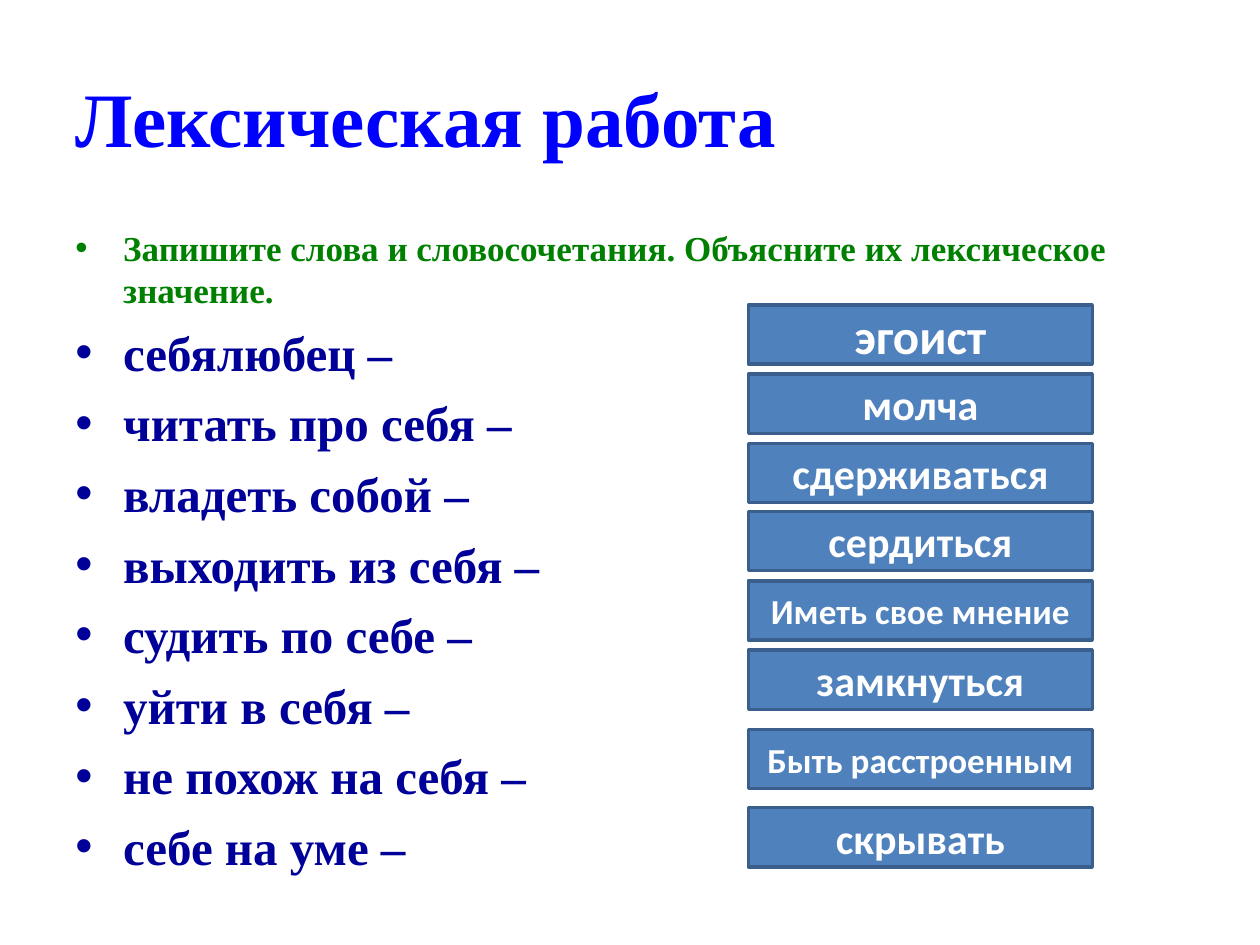
from lxml.etree import SubElement
from pptx import Presentation
from pptx.dml.color import RGBColor as RGB
from pptx.enum.shapes import MSO_SHAPE as Shape
from pptx.enum.text import MSO_ANCHOR as Anchor, PP_ALIGN as Align
from pptx.oxml.ns import qn
from pptx.util import Inches, Pt

# Content
TITLE = "Лексическая работа"
TASK = "Запишите слова и словосочетания. Объясните их лексическое значение."
TERMS = ["себялюбец –", "читать про себя –", "владеть собой –",
         "выходить из себя –", "судить по себе –", "уйти в себя –",
         "не похож на себя –", "себе на уме –"]
CARDS = [("эгоист", 28), ("молча", 24), ("сдерживаться", 24),
         ("сердиться", 24), ("Иметь свое мнение", 20), ("замкнуться", 24),
         ("Быть расстроенным", 20), ("скрывать", 24)]

# Layout of the cards: the last two stand further apart
LEFT, TOP, WIDE, HIGH = 5.94, 2.42, 2.73, 0.47
STEP, LAST_STEP, TIGHT = 0.548, 0.625, 5
SERIF = "Times New Roman"


def color(code):
    return RGB.from_string(code)


def write(text, para, size, code, font=SERIF, align=Align.LEFT,
          bullet=False, before=0):
    para.alignment = align
    para.space_before = Pt(before)
    if bullet:
        props = para._p.get_or_add_pPr()
        props.set("marL", str(Inches(0.38)))
        props.set("indent", str(-Inches(0.38)))
        SubElement(props, qn("a:buFont")).set("typeface", "Arial")
        SubElement(props, qn("a:buChar")).set("char", "•")
    run = para.add_run()
    run.text = text
    face = run.font
    face.name, face.size, face.bold = font, Pt(size), True
    face.color.rgb = color(code)


def add_box(slide, left, top, wide, high, anchor):
    box = slide.shapes.add_textbox(*map(Inches, (left, top, wide, high)))
    frame = box.text_frame
    frame.word_wrap = True
    frame.vertical_anchor = anchor
    return frame


deck = Presentation()
deck.slide_width, deck.slide_height = Inches(10), Inches(7.5)
slide = deck.slides.add_slide(deck.slide_layouts[6])

# Title
head = add_box(slide, 0.5, 0.3, 9, 1.25, Anchor.MIDDLE)
write(TITLE, head.paragraphs[0], 44, "0000FF")

# Task and terms
body = add_box(slide, 0.5, 1.75, 9, 4.95, Anchor.TOP)
write(TASK, body.paragraphs[0], 20, "008000", bullet=True)
for term in TERMS:
    write(term, body.add_paragraph(), 28, "000099", bullet=True, before=6.7)

# Meaning cards
for i, (word, size) in enumerate(CARDS):
    top = TOP + STEP * min(i, TIGHT) + LAST_STEP * max(i - TIGHT, 0)
    card = slide.shapes.add_shape(
        Shape.RECTANGLE, *map(Inches, (LEFT, round(top, 2), WIDE, HIGH)))
    card.shadow.inherit = False
    card.fill.solid()
    card.fill.fore_color.rgb = color("4F81BD")
    card.line.color.rgb = color("3A5F8C")
    card.line.width = Pt(2)
    card.text_frame.vertical_anchor = Anchor.MIDDLE
    write(word, card.text_frame.paragraphs[0], size, "FFFFFF",
          font="Calibri", align=Align.CENTER)

deck.save("out.pptx")
